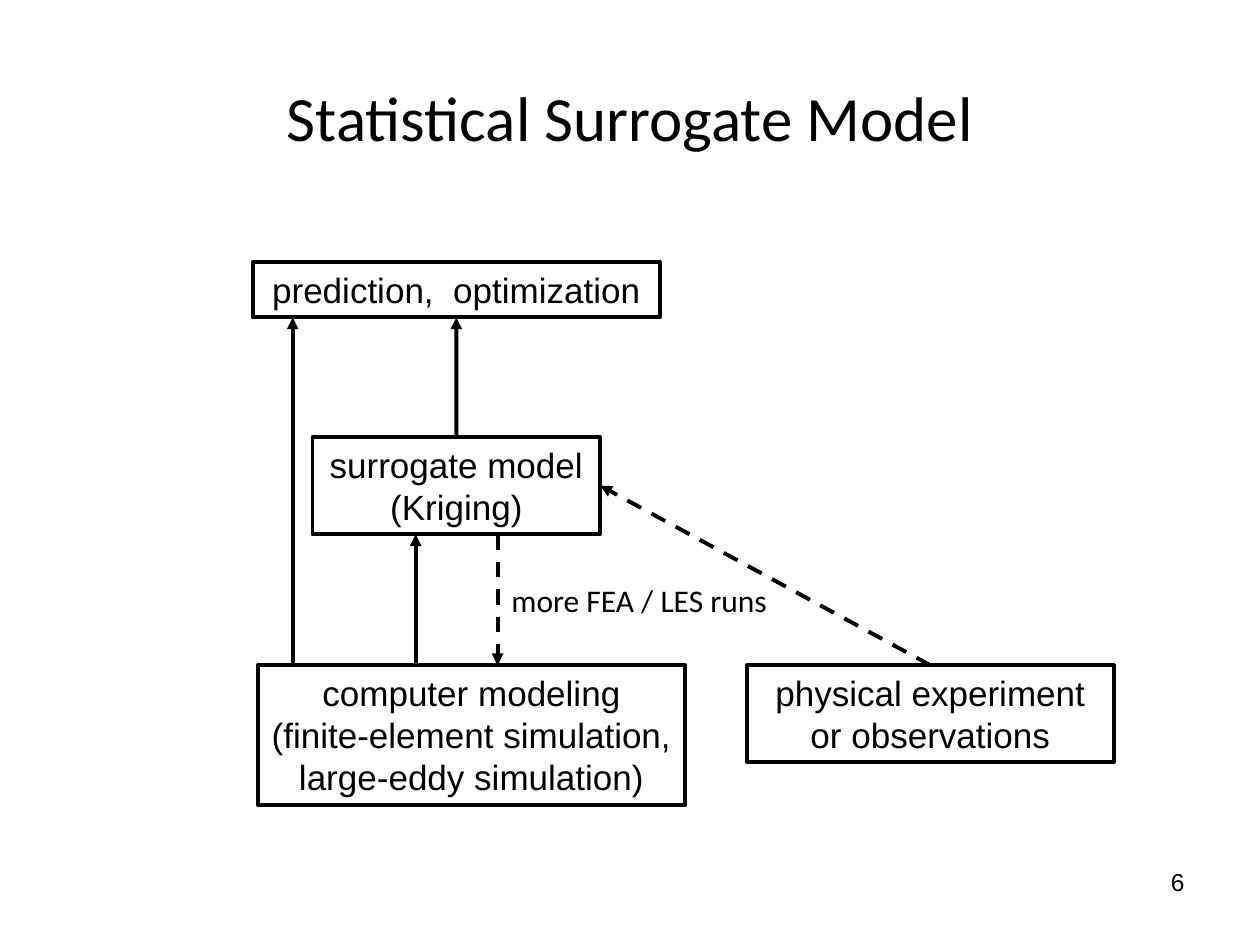
from dataclasses import dataclass

from lxml.etree import SubElement
from pptx import Presentation
from pptx.dml.color import RGBColor
from pptx.enum.dml import MSO_LINE
from pptx.enum.shapes import MSO_CONNECTOR, MSO_SHAPE
from pptx.enum.text import MSO_ANCHOR, PP_ALIGN
from pptx.oxml.ns import qn
from pptx.util import Cm, Pt


@dataclass(frozen=True)
class Theme:
    ink: RGBColor = RGBColor(0, 0, 0)
    paper: RGBColor = RGBColor(255, 255, 255)
    heading_font: str = "Calibri"
    box_font: str = "Arial"
    title: int = 36
    box: int = 20
    label: int = 18
    number: int = 14
    line: float = 2.25


THEME = Theme()


def set_text(s, text, font=THEME.box_font, size=THEME.box,
             align=PP_ALIGN.CENTER, anchor=MSO_ANCHOR.TOP):
    tf = s.text_frame
    tf.word_wrap = True
    tf.vertical_anchor = anchor
    for i, line in enumerate(text.split("\n")):
        p = tf.add_paragraph() if i else tf.paragraphs[0]
        p.alignment = align
        r = p.add_run()
        r.text = line
        r.font.name = font
        r.font.size = Pt(size)
        r.font.color.rgb = THEME.ink


def add_label(slide, text, x, y, w, h, **fmt):
    s = slide.shapes.add_textbox(Cm(x), Cm(y), Cm(w), Cm(h))
    set_text(s, text, **fmt)


def add_box(slide, text, x, y, w, h):
    s = slide.shapes.add_shape(MSO_SHAPE.RECTANGLE, Cm(x), Cm(y), Cm(w), Cm(h))
    s.shadow.inherit = False
    s.fill.solid()
    s.fill.fore_color.rgb = THEME.paper
    s.line.color.rgb = THEME.ink
    s.line.width = Pt(THEME.line)
    set_text(s, text)
    return s


def add_arrow(slide, x1=0, y1=0, x2=0, y2=0, dashed=False):
    s = slide.shapes.add_connector(MSO_CONNECTOR.STRAIGHT, x1, y1, x2, y2)
    s.line.color.rgb = THEME.ink
    s.line.width = Pt(THEME.line)
    if dashed:
        s.line.dash_style = MSO_LINE.DASH
    SubElement(s.line._get_or_add_ln(), qn("a:tailEnd"), type="triangle")
    SubElement(s._element.spPr, qn("a:effectLst"))
    return s


def join_arrow(slide, start, start_side, end, end_side, dashed=False):
    s = add_arrow(slide, dashed=dashed)
    s.begin_connect(start, start_side)
    s.end_connect(end, end_side)


def main():
    prs = Presentation()
    prs.slide_width, prs.slide_height = Cm(25.4), Cm(19.05)
    slide = prs.slides.add_slide(prs.slide_layouts[6])

    add_label(slide, "Statistical Surrogate Model", 1.27, 0.76, 22.86, 3.18,
              font=THEME.heading_font, size=THEME.title, anchor=MSO_ANCHOR.MIDDLE)

    prediction = add_box(slide, "prediction,  optimization", 5.1, 5.28, 8.2, 1.12)
    surrogate = add_box(slide, "surrogate model\n(Kriging)", 6.3, 8.81, 5.8, 1.96)
    computer = add_box(
        slide, "computer modeling\n(finite-element simulation, large-eddy simulation)",
        5.2, 13.41, 8.61, 2.82)
    physical = add_box(slide, "physical experiment\nor observations",
                       15.06, 13.41, 7.39, 1.96)

    prediction_bottom = prediction.top + prediction.height
    surrogate_bottom = surrogate.top + surrogate.height
    up_x, down_x, direct_x = Cm(8.38), Cm(10.03), Cm(5.9)
    add_arrow(slide, up_x, computer.top, up_x, surrogate_bottom)
    add_arrow(slide, down_x, surrogate_bottom, down_x, computer.top, dashed=True)
    add_arrow(slide, direct_x, computer.top, direct_x, prediction_bottom)
    join_arrow(slide, physical, 0, surrogate, 3, dashed=True)
    join_arrow(slide, surrogate, 0, prediction, 2)

    add_label(slide, "more FEA / LES runs", 10.06, 11.58, 6.05, 1.02,
              font=THEME.heading_font, size=THEME.label, align=PP_ALIGN.LEFT)
    add_label(slide, "6", 18.21, 17.35, 5.92, 1.32,
              size=THEME.number, align=PP_ALIGN.RIGHT)

    prs.save("out.pptx")


if __name__ == "__main__":
    main()
